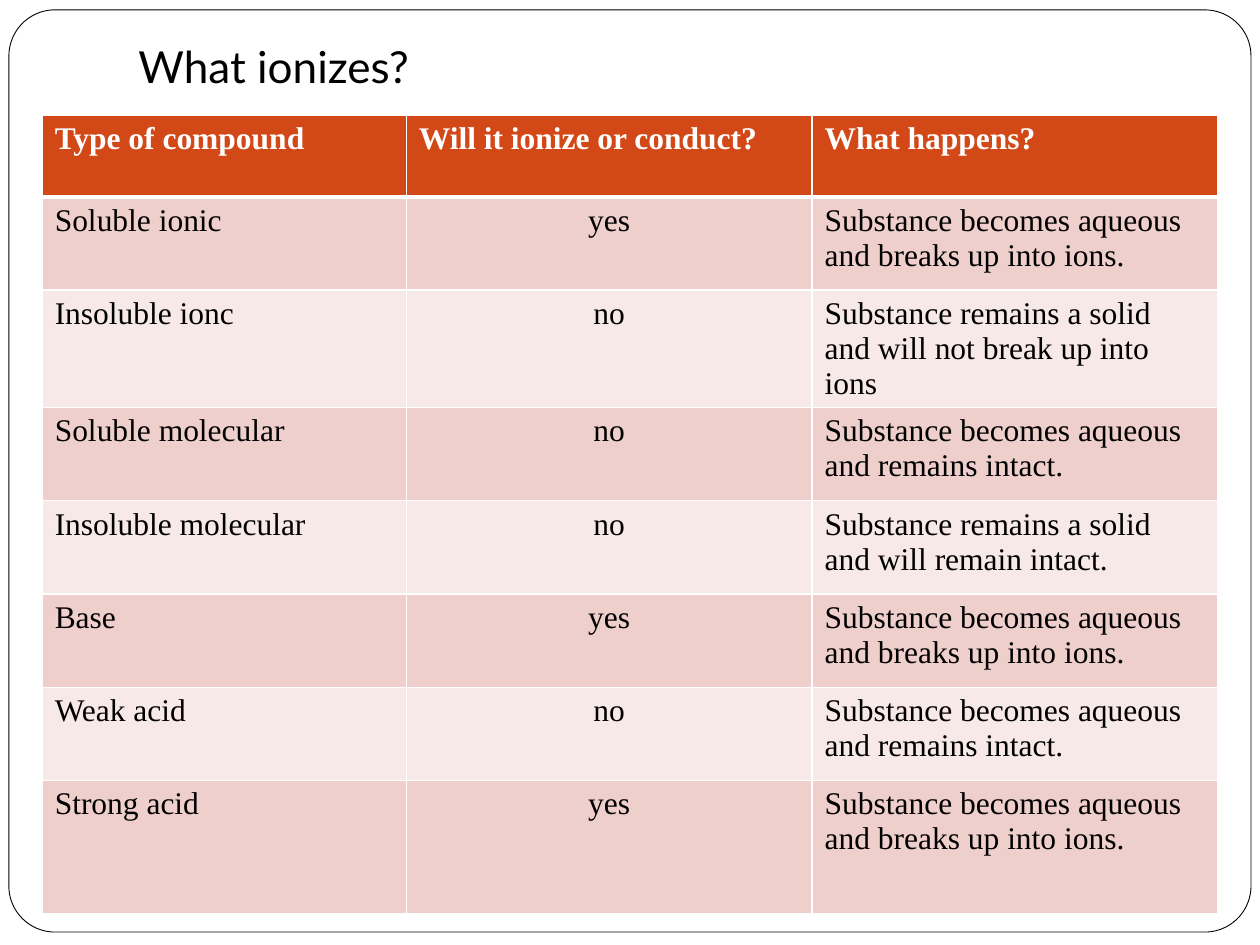
from dataclasses import dataclass

import pptx
import pptx.dml.color
import pptx.enum.shapes
import pptx.enum.text
import pptx.oxml
import pptx.oxml.ns
import pptx.util

Cm = pptx.util.Cm
Pt = pptx.util.Pt


@dataclass(frozen=True)
class Theme:
    ink: str = "000000"
    paper: str = "FFFFFF"
    header: str = "D34817"
    bands: tuple = ("EFCFCC", "F7E9E8")
    title_font: str = "Lato"
    table_font: str = "Times New Roman"
    title_size: float = 25.2
    table_size: float = 18


THEME = Theme()
IONS = "Substance becomes aqueous and breaks up into ions."
INTACT = "Substance becomes aqueous and remains intact."
COMPOUNDS = [
    ("Type of compound", "Will it ionize or conduct?", "What happens?"),
    ("Soluble ionic", "yes", IONS),
    ("Insoluble ionc", "no", "Substance remains a solid and will not break up into ions"),
    ("Soluble molecular", "no", INTACT),
    ("Insoluble molecular", "no", "Substance remains a solid and will remain intact."),
    ("Base", "yes", IONS),
    ("Weak acid", "no", INTACT),
    ("Strong acid", "yes", IONS),
]
COLUMN_WIDTHS = [7.34, 8.18, 8.18]
ROW_HEIGHTS = [1.65] + [1.88] * 6 + [2.69]


def rgb(code):
    return pptx.dml.color.RGBColor.from_string(code)


def style_font(font, name, size, color, bold=False):
    font.name = name
    font.size = Pt(size)
    font.color.rgb = rgb(color)
    font.bold = bold


def add_frame(slide):
    frame = slide.shapes.add_shape(
        pptx.enum.shapes.MSO_SHAPE.ROUNDED_RECTANGLE,
        Cm(0.18), Cm(0.2), Cm(25.04), Cm(18.59))
    frame.adjustments[0] = 0.05
    frame.shadow.inherit = False
    frame.fill.solid()
    frame.fill.fore_color.rgb = rgb(THEME.paper)
    frame.line.color.rgb = rgb(THEME.ink)
    frame.line.width = Pt(0.5)
    slide.shapes.title.element.addprevious(frame.element)


def write_title(slide, wording):
    title = slide.shapes.title
    title.left, title.top = Cm(2.54), Cm(0.76)
    title.width, title.height = Cm(21.59), Cm(1.35)
    text = title.text_frame
    text.text = wording
    text.auto_size = pptx.enum.text.MSO_AUTO_SIZE.NONE
    text.vertical_anchor = pptx.enum.text.MSO_ANCHOR.BOTTOM
    text.margin_left = text.margin_right = text.margin_bottom = Cm(0.25)
    text.margin_top = Cm(0.13)
    heading = text.paragraphs[0]
    heading.alignment = pptx.enum.text.PP_ALIGN.LEFT
    style_font(heading.font, THEME.title_font, THEME.title_size, THEME.ink)


def set_borders(cell, widths):
    properties = cell._tc.get_or_add_tcPr()
    for side, width in widths.items():
        properties.append(pptx.oxml.parse_xml(
            f'<a:ln{side} {pptx.oxml.ns.nsdecls("a")} w="{Pt(width)}">'
            f'<a:solidFill><a:srgbClr val="{THEME.paper}"/></a:solidFill></a:ln{side}>'))


def fill_cell(cell, wording, row, column):
    is_header = row == 0
    set_borders(cell, {"L": 1, "R": 1, "T": 3 if row == 1 else 1, "B": 3 if is_header else 1})
    cell.fill.solid()
    cell.fill.fore_color.rgb = rgb(THEME.header if is_header else THEME.bands[(row - 1) % 2])
    cell.text = wording
    entry = cell.text_frame.paragraphs[0]
    if column == 1 and not is_header:
        entry.alignment = pptx.enum.text.PP_ALIGN.CENTER
    if column == 2:
        cell.margin_right = Cm(0.5)
    style_font(entry.font, THEME.table_font, THEME.table_size,
               THEME.paper if is_header else THEME.ink, is_header)


def add_compound_table(slide):
    table = slide.shapes.add_table(
        len(COMPOUNDS), len(COLUMN_WIDTHS), Cm(0.85), Cm(2.32),
        Cm(sum(COLUMN_WIDTHS)), Cm(sum(ROW_HEIGHTS))).table
    for column, width in zip(table.columns, COLUMN_WIDTHS):
        column.width = Cm(width)
    for row, height in zip(table.rows, ROW_HEIGHTS):
        row.height = Cm(height)
    for row, compound in enumerate(COMPOUNDS):
        for column, wording in enumerate(compound):
            fill_cell(table.cell(row, column), wording, row, column)


def main():
    deck = pptx.Presentation()
    deck.slide_width, deck.slide_height = Cm(25.4), Cm(19.05)
    slide = deck.slides.add_slide(deck.slide_layouts[5])
    add_frame(slide)
    write_title(slide, "What ionizes?")
    add_compound_table(slide)
    deck.save("out.pptx")


if __name__ == "__main__":
    main()
